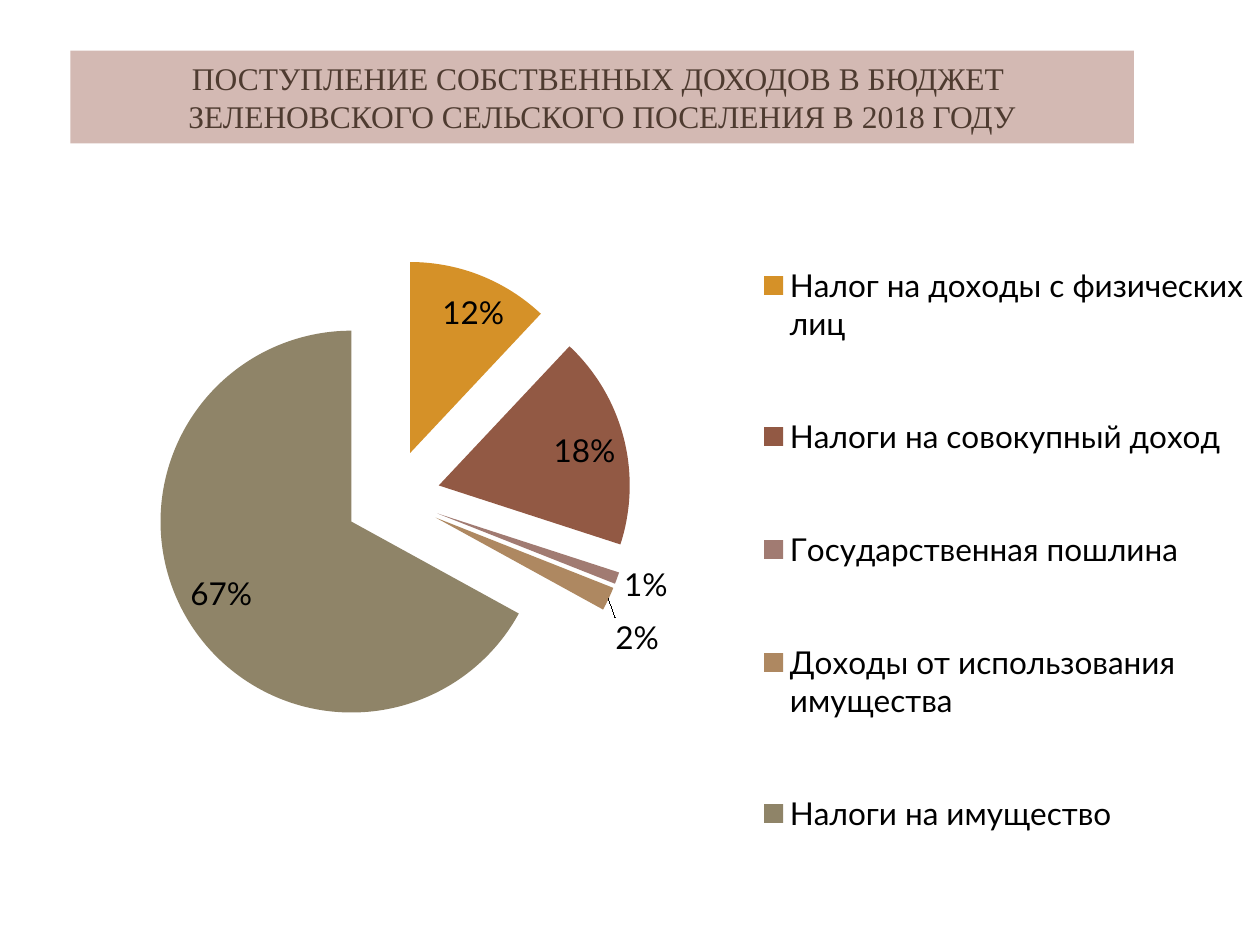
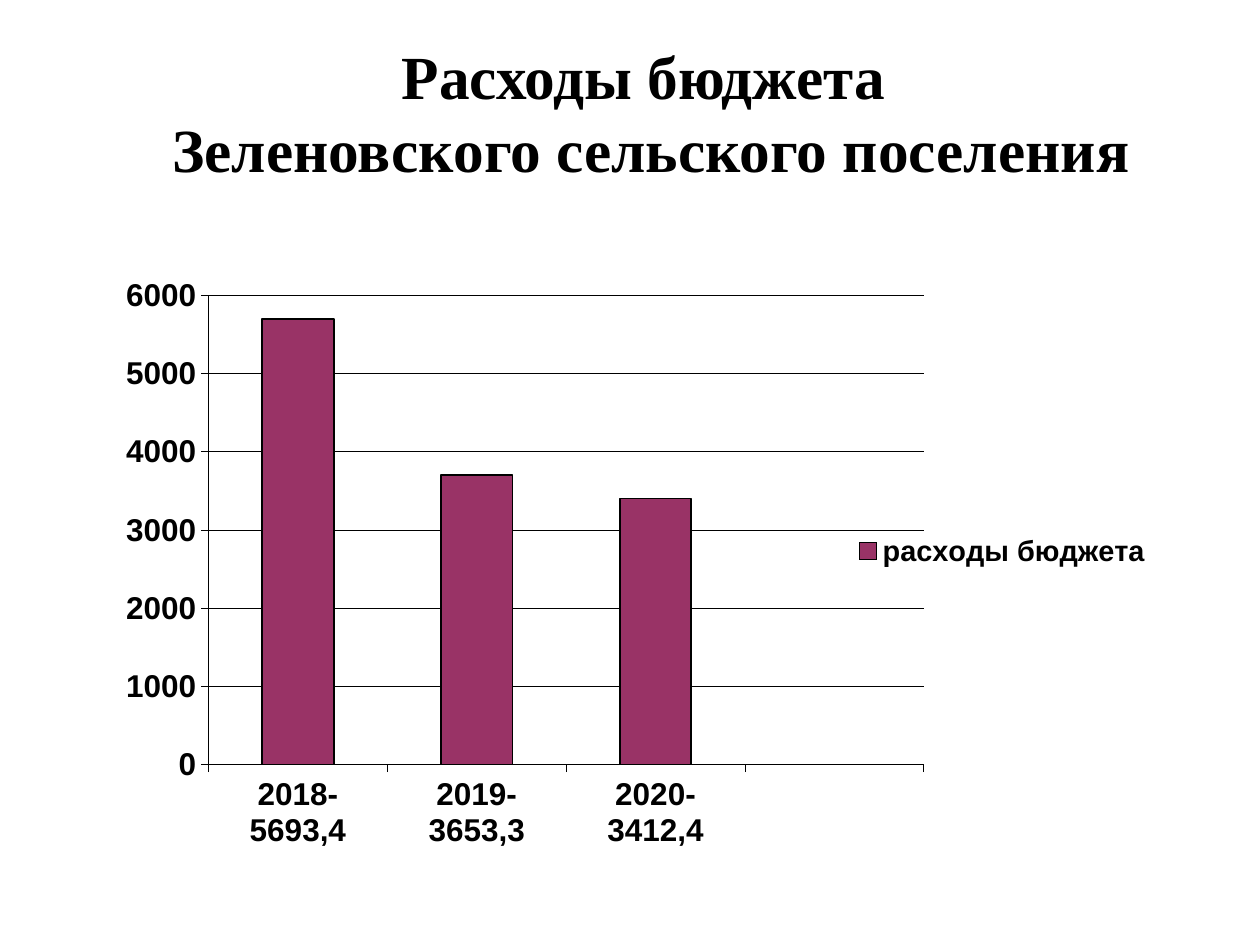
from lxml import etree
from pptx import Presentation
from pptx.chart.data import CategoryChartData
from pptx.dml.color import RGBColor
from pptx.enum.chart import XL_CHART_TYPE, XL_LABEL_POSITION, XL_LEGEND_POSITION, XL_TICK_MARK
from pptx.enum.shapes import MSO_SHAPE
from pptx.enum.text import MSO_ANCHOR, PP_ALIGN
from pptx.oxml.ns import qn
from pptx.util import Cm, Pt

BLACK = RGBColor(0x00, 0x00, 0x00)
BROWN = RGBColor(0x4E, 0x3B, 0x30)
ROSE = RGBColor(0xD3, 0xB9, 0xB3)
PLUM = RGBColor(0x99, 0x33, 0x66)
TITLE_FONT = "Times New Roman"

# Income source, share in percent, slice colour
INCOME = [
    ("Налог на доходы с физических лиц", 12, RGBColor(0xD5, 0x91, 0x28)),
    ("Налоги на совокупный доход", 18, RGBColor(0x92, 0x59, 0x44)),
    ("Государственная пошлина", 1, RGBColor(0xA1, 0x7B, 0x72)),
    ("Доходы от использования имущества", 2, RGBColor(0xAE, 0x88, 0x61)),
    ("Налоги на имущество", 67, RGBColor(0x8F, 0x84, 0x68)),
]
# The last category is an empty place on the axis
EXPENSES = [("2018-5693,4", 5700), ("2019-3653,3", 3700), ("2020-3412,4", 3400), ("", None)]


def style_font(font, size, name, color=BLACK, bold=False):
    font.size, font.name, font.bold = Pt(size), name, bold
    font.color.rgb = color


def set_line(line, width):
    line.color.rgb = BLACK
    line.width = Pt(width)


def write_title(shape, lines, size, color, bold):
    """Centred title, one paragraph for each entry of lines."""
    text_frame = shape.text_frame
    text_frame.word_wrap = True
    text_frame.text = "\n".join(lines)
    for paragraph in text_frame.paragraphs:
        paragraph.alignment = PP_ALIGN.CENTER
        for run in paragraph.runs:
            style_font(run.font, size, TITLE_FONT, color, bold)


def set_layout(parent, index, box, inner=False):
    """Place a chart part by fractions of the chart: left, top, width, height."""
    for old_layout in parent.findall(qn("c:layout")):
        parent.remove(old_layout)
    layout = etree.Element(qn("c:layout"))
    parent.insert(index, layout)
    manual = etree.SubElement(layout, qn("c:manualLayout"))
    settings = [("layoutTarget", "inner")] if inner else []
    settings += [("xMode", "edge"), ("yMode", "edge"), *zip("xywh", box)]
    for tag, value in settings:
        etree.SubElement(manual, qn(f"c:{tag}")).set("val", str(value))


def add_chart(slide, chart_type, box, series_name, rows, plot_box, legend_box, font_name, bold):
    """Chart with one series, a placed plot area and a legend on the right."""
    chart_data = CategoryChartData()
    chart_data.categories = [row[0] for row in rows]
    chart_data.add_series(series_name, [row[1] for row in rows])
    chart = slide.shapes.add_chart(chart_type, *map(Cm, box), chart_data).chart
    chart.has_title = False
    style_font(chart.font, 18, font_name, bold=bold)
    chart.has_legend = True
    chart.legend.position = XL_LEGEND_POSITION.RIGHT
    chart.legend.include_in_layout = False
    set_layout(chart.element.find(".//" + qn("c:plotArea")), 0, plot_box, inner=True)
    set_layout(chart.element.find(".//" + qn("c:legend")), 1, legend_box)
    return chart


def add_income_pie(slide, box):
    chart = add_chart(slide, XL_CHART_TYPE.PIE, box, "Доходы", INCOME,
                      (0.05, 0.13, 0.41, 0.64), (0.56, 0.04, 0.44, 0.96), "Lato", False)
    chart.plots[0].vary_by_categories = True
    series = chart.plots[0].series[0]
    for index, (_, _, color) in enumerate(INCOME):
        fill = series.points[index].format.fill
        fill.solid()
        fill.fore_color.rgb = color

    # Percent labels
    labels = series.data_labels
    labels.show_value = False
    labels.show_percentage = True
    labels.number_format = "0%"
    labels.number_format_is_linked = False
    labels.position = XL_LABEL_POSITION.BEST_FIT
    style_font(labels.font, 18, "Lato")

    # Slices pulled apart
    explosion = etree.Element(qn("c:explosion"))
    explosion.set("val", "25")
    chart.element.find(".//" + qn("c:dPt")).addprevious(explosion)


def add_expense_columns(slide, box):
    chart = add_chart(slide, XL_CHART_TYPE.COLUMN_CLUSTERED, box, "расходы бюджета", EXPENSES,
                      (0.12, 0.04, 0.64, 0.77), (0.69, 0.43, 0.28, 0.06), "Arial", True)
    style_font(chart.legend.font, 16.5, "Arial", bold=True)

    # Columns
    plot = chart.plots[0]
    plot.vary_by_categories = False
    plot.gap_width = 150
    column_format = plot.series[0].format
    column_format.fill.solid()
    column_format.fill.fore_color.rgb = PLUM
    set_line(column_format.line, 1)

    # Axes and grid
    for axis in (chart.category_axis, chart.value_axis):
        axis.major_tick_mark = XL_TICK_MARK.OUTSIDE
        axis.minor_tick_mark = XL_TICK_MARK.NONE
        style_font(axis.tick_labels.font, 18, "Arial", bold=True)
        set_line(axis.format.line, 0.25)
    value_axis = chart.value_axis
    value_axis.minimum_scale, value_axis.maximum_scale = 0, 6000
    value_axis.major_unit = 1000
    value_axis.tick_labels.number_format = "0"
    value_axis.tick_labels.number_format_is_linked = False
    value_axis.has_major_gridlines = True
    set_line(value_axis.major_gridlines.format.line, 0.25)


def add_title_band(slide, box):
    band = slide.shapes.add_shape(MSO_SHAPE.RECTANGLE, *map(Cm, box))
    band.shadow.inherit = False
    band.fill.solid()
    band.fill.fore_color.rgb = ROSE
    band.line.fill.background()
    band.text_frame.vertical_anchor = MSO_ANCHOR.MIDDLE
    title = ("ПОСТУПЛЕНИЕ СОБСТВЕННЫХ ДОХОДОВ В БЮДЖЕТ \v"
             "ЗЕЛЕНОВСКОГО СЕЛЬСКОГО ПОСЕЛЕНИЯ В 2018 ГОДУ")
    write_title(band, [title], 18, BROWN, False)


def add_plain_title(slide, box):
    title_box = slide.shapes.add_textbox(*map(Cm, box))
    write_title(title_box, ["Расходы бюджета ", "Зеленовского сельского поселения"],
                35, BLACK, True)


def main():
    presentation = Presentation()
    presentation.slide_width, presentation.slide_height = Cm(25.4), Cm(19.05)
    blank_layout = presentation.slide_layouts[6]

    income_slide = presentation.slides.add_slide(blank_layout)
    add_title_band(income_slide, (1.42, 1.02, 21.44, 1.87))
    add_income_pie(income_slide, (1.93, 3.26, 23.47, 15.04))

    expense_slide = presentation.slides.add_slide(blank_layout)
    add_plain_title(expense_slide, (1.7, 0.64, 22.86, 3.18))
    add_expense_columns(expense_slide, (1.5, 5.46, 22.53, 12.29))

    presentation.save("out.pptx")


if __name__ == "__main__":
    main()
